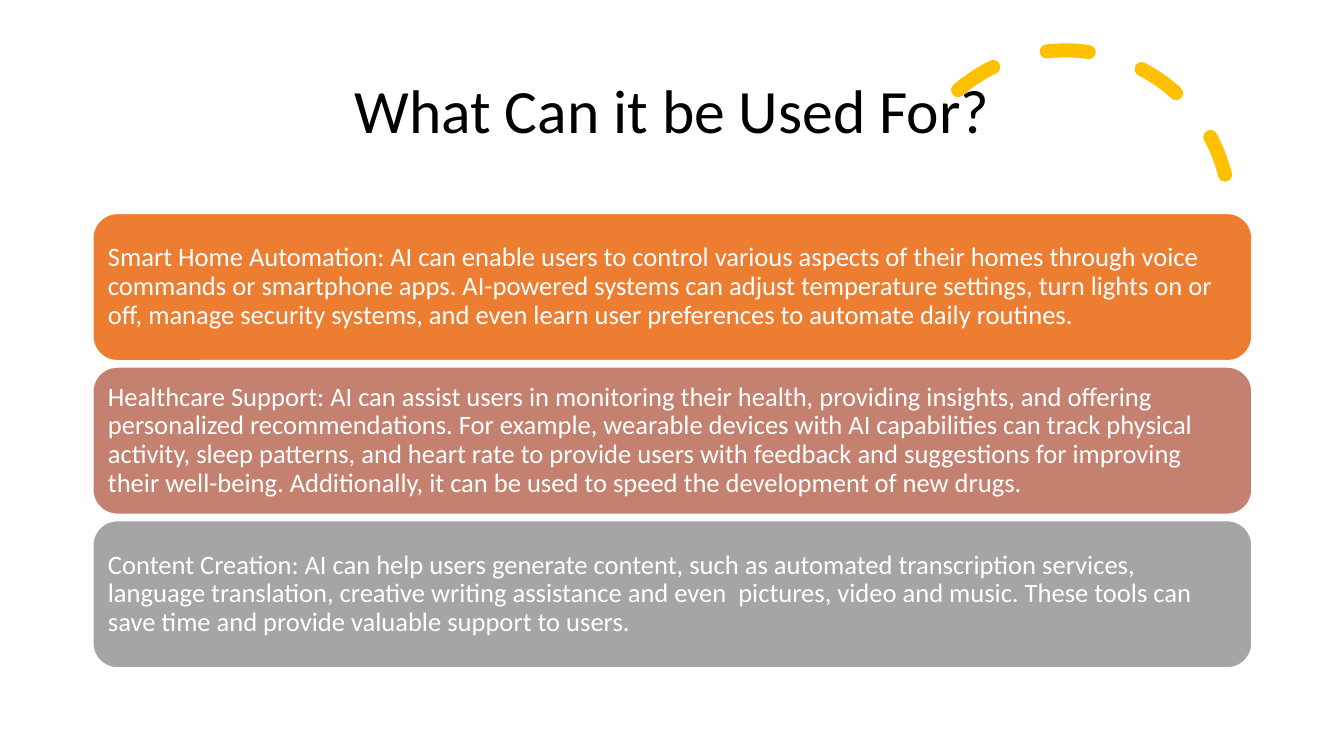
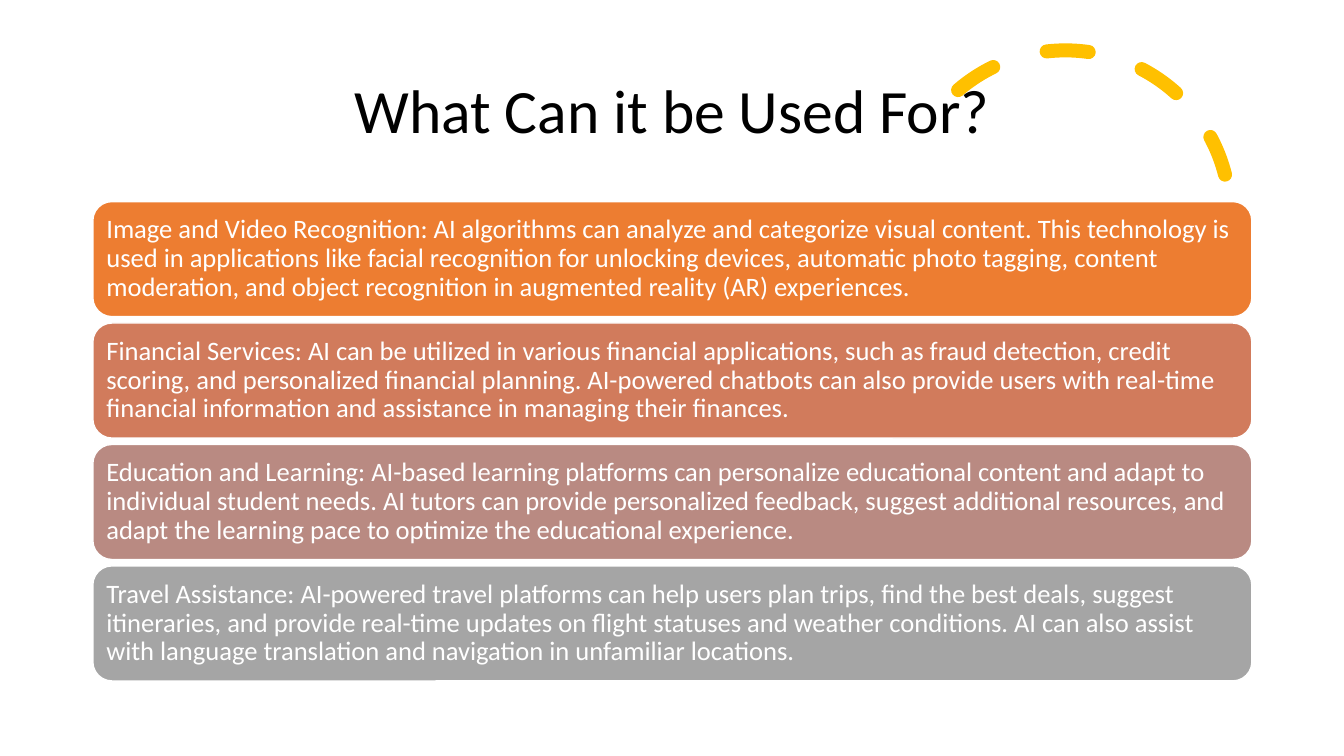
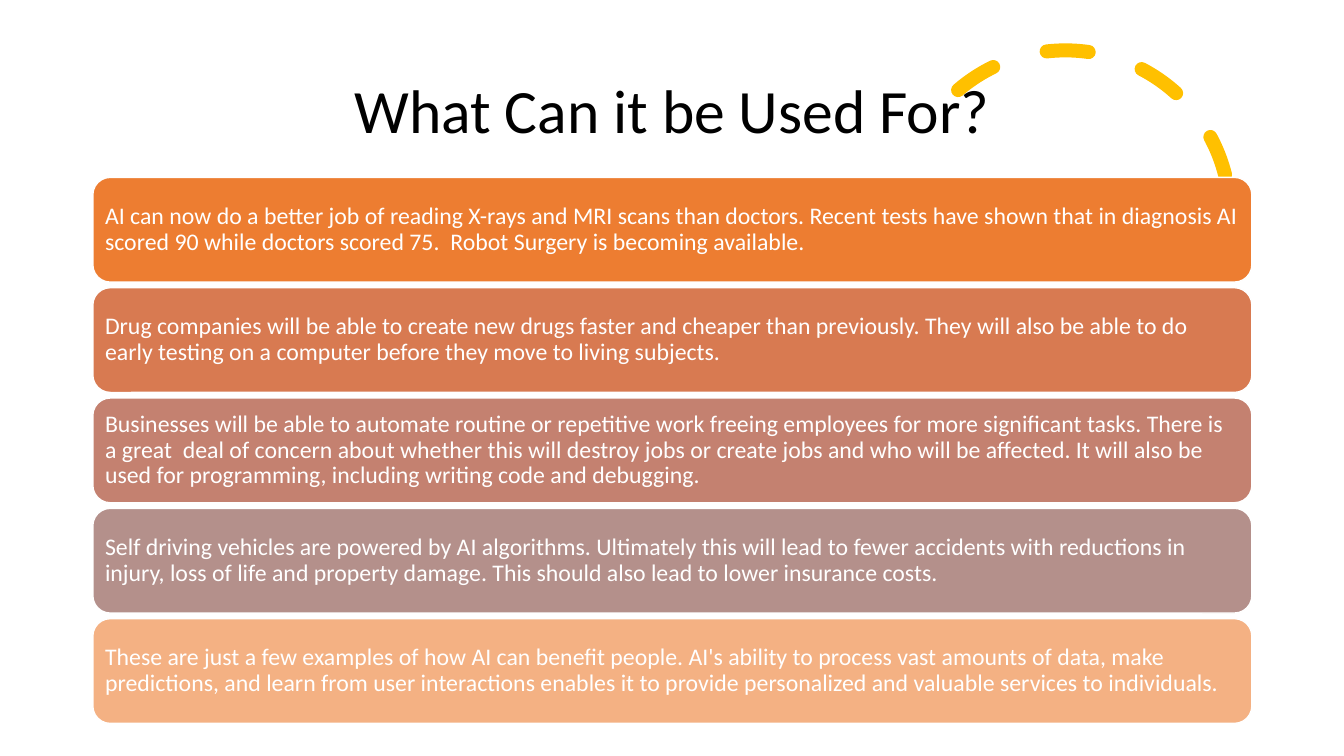
from pptx import Presentation
from pptx.dml.color import RGBColor as RGB
from pptx.enum.dml import MSO_LINE as Dash
from pptx.enum.shapes import MSO_SHAPE as Kind
from pptx.enum.text import MSO_ANCHOR as Anchor, MSO_AUTO_SIZE as Fit, PP_ALIGN as Align
from pptx.oxml.ns import qn
from pptx.util import Cm, Pt

HUES = {
    "black": "000000", "white": "FFFFFF", "gold": "FFC000",
    "orange": "ED7D31", "copper": "D87A51", "clay": "D17B5C",
    "rose": "C48170", "mauve": "B98A82", "dusk": "B4908B",
    "gray": "A5A5A5", "peach": "F4B183",
}
FONT = "Calibri"
TITLE = "What Can it be Used For?"
LEFT, WIDTH = 2.34, 29.21

# Each slide: first bar's top, bar height, gap and text inset in cm, text size, bars
SLIDES = [
    (5.38, 3.71, 0.16, 0.2, 19, [
        ("orange", "Smart Home Automation: AI can enable users to control various aspects of their homes through voice commands or smartphone apps. AI-powered systems can adjust temperature settings, turn lights on or off, manage security systems, and even learn user preferences to automate daily routines."),
        ("rose", "Healthcare Support: AI can assist users in monitoring their health, providing insights, and offering personalized recommendations. For example, wearable devices with AI capabilities can track physical activity, sleep patterns, and heart rate to provide users with feedback and suggestions for improving their well-being. Additionally, it can be used to speed the development of new drugs."),
        ("gray", "Content Creation: AI can help users generate content, such as automated transcription services, language translation, creative writing assistance and even  pictures, video and music. These tools can save time and provide valuable support to users."),
    ]),
    (5.08, 2.9, 0.16, 0.2, 19, [
        ("orange", "Image and Video Recognition: AI algorithms can analyze and categorize visual content. This technology is used in applications like facial recognition for unlocking devices, automatic photo tagging, content moderation, and object recognition in augmented reality (AR) experiences."),
        ("clay", "Financial Services: AI can be utilized in various financial applications, such as fraud detection, credit scoring, and personalized financial planning. AI-powered chatbots can also provide users with real-time financial information and assistance in managing their finances."),
        ("mauve", "Education and Learning: AI-based learning platforms can personalize educational content and adapt to individual student needs. AI tutors can provide personalized feedback, suggest additional resources, and adapt the learning pace to optimize the educational experience."),
        ("gray", "Travel Assistance: AI-powered travel platforms can help users plan trips, find the best deals, suggest itineraries, and provide real-time updates on flight statuses and weather conditions. AI can also assist with language translation and navigation in unfamiliar locations."),
    ]),
    (4.47, 2.64, 0.14, 0.18, 17, [
        ("orange", "AI can now do a better job of reading X-rays and MRI scans than doctors. Recent tests have shown that in diagnosis AI scored 90 while doctors scored 75.  Robot Surgery is becoming available."),
        ("copper", "Drug companies will be able to create new drugs faster and cheaper than previously. They will also be able to do early testing on a computer before they move to living subjects."),
        ("rose", "Businesses will be able to automate routine or repetitive work freeing employees for more significant tasks. There is a great  deal of concern about whether this will destroy jobs or create jobs and who will be affected. It will also be used for programming, including writing code and debugging."),
        ("dusk", "Self driving vehicles are powered by AI algorithms. Ultimately this will lead to fewer accidents with reductions in injury, loss of life and property damage. This should also lead to lower insurance costs."),
        ("peach", "These are just a few examples of how AI can benefit people. AI's ability to process vast amounts of data, make predictions, and learn from user interactions enables it to provide personalized and valuable services to individuals."),
    ]),
]


def paint(name):
    return RGB.from_string(HUES[name])


def place(shape, left, top, width, height):
    shape.left, shape.top = Cm(left), Cm(top)
    shape.width, shape.height = Cm(width), Cm(height)


def write(shape, text, size, hue, align):
    frame = shape.text_frame
    frame.text = text
    frame.word_wrap = True
    frame.auto_size = Fit.NONE
    frame.vertical_anchor = Anchor.MIDDLE
    para = frame.paragraphs[0]
    para.alignment = align
    para.line_spacing = 0.9
    font = para.runs[0].font
    font.name, font.size = FONT, Pt(size)
    font.color.rgb = paint(hue)


def add_shape(slide, kind, box, line, weight):
    shape = slide.shapes.add_shape(kind, 0, 0, 0, 0)
    place(shape, *box)
    shape.shadow.inherit = False
    shape.line.color.rgb = paint(line)
    shape.line.width = Pt(weight)
    return shape


def add_title(slide):
    title = slide.shapes.title
    place(title, LEFT, 1.01, WIDTH, 3.68)
    write(title, TITLE, 44, "black", Align.CENTER)


def add_arc(slide):
    arc = add_shape(slide, Kind.ARC, (22.7, 1.27, 8.3, 8.3), "gold", 10)
    arc.adjustments[0] = 146.13
    arc.adjustments[1] = 0
    arc.rotation = 345.8
    arc.fill.background()
    arc.line.dash_style = Dash.DASH
    arc.element.spPr.find(qn("a:ln")).set("cap", "rnd")
    # The arc lies behind the title
    slide.shapes.title.element.addprevious(arc.element)


def add_bars(slide, top, height, gap, inset, size, bars):
    for row, (hue, text) in enumerate(bars):
        box = (LEFT, top + row * (height + gap), WIDTH, height)
        bar = add_shape(slide, Kind.ROUNDED_RECTANGLE, box, "white", 1)
        bar.fill.solid()
        bar.fill.fore_color.rgb = paint(hue)
        frame = bar.text_frame
        frame.margin_left = frame.margin_right = Cm(inset)
        frame.margin_top = frame.margin_bottom = Cm(inset)
        write(bar, text, size, "white", Align.LEFT)


def main():
    deck = Presentation()
    deck.slide_width, deck.slide_height = Cm(33.87), Cm(19.05)
    for data in SLIDES:
        slide = deck.slides.add_slide(deck.slide_layouts[5])
        add_title(slide)
        add_arc(slide)
        add_bars(slide, *data)
    deck.save("out.pptx")


if __name__ == "__main__":
    main()
